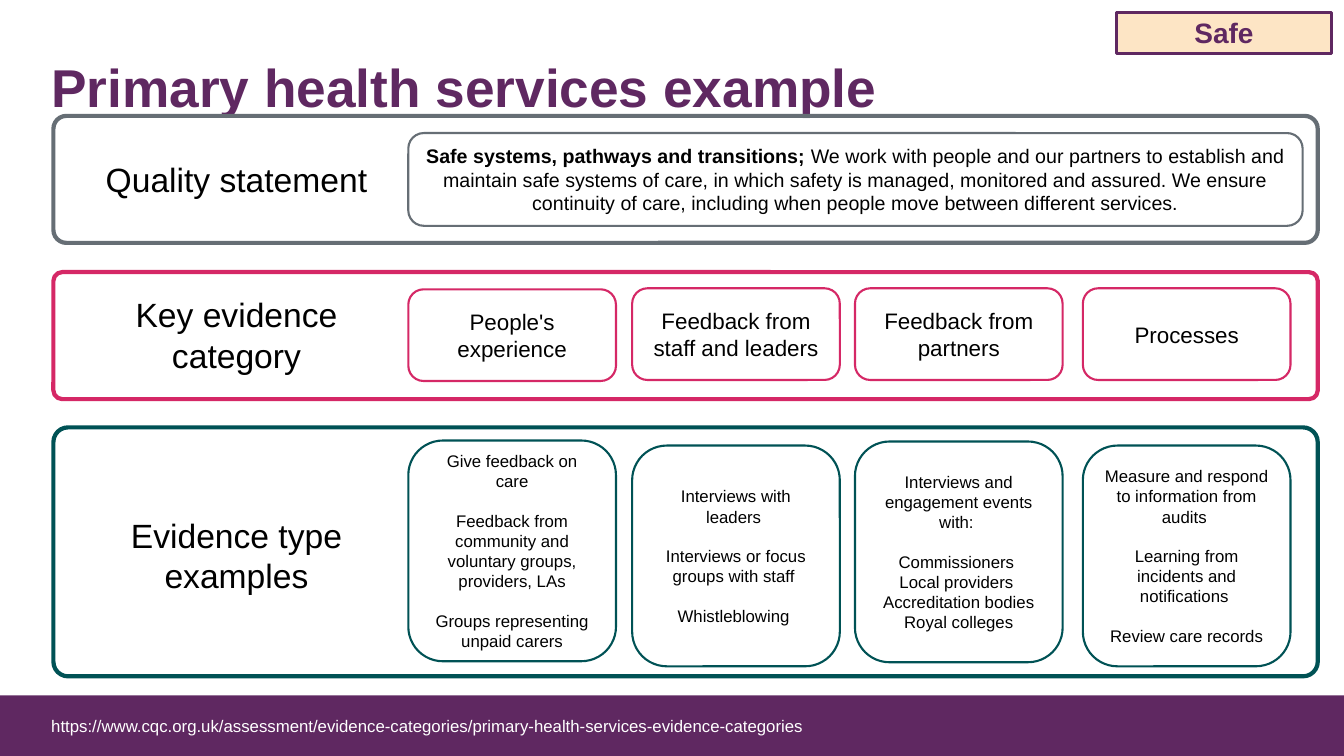
from pptx import Presentation
from pptx.dml.color import RGBColor
from pptx.enum.shapes import MSO_SHAPE as Shape
from pptx.enum.text import MSO_ANCHOR as Anchor, PP_ALIGN as Align
from pptx.util import Inches, Pt

# Content
TITLE = "Primary health services example"
TAG = "Safe"
LINK = "https://www.cqc.org.uk/assessment/evidence-categories/primary-health-services-evidence-categories"
STATEMENT = [
    ("Safe systems, pathways and transitions; ", True),
    ("We work with people and our partners to establish and maintain safe systems "
     "of care, in which safety is managed, monitored and assured. We ensure continuity "
     "of care, including when people move between different services.", False),
]
PURPLE, GREY, PINK, TEAL = "5F2861", "666E75", "D52866", "005255"
CREAM, BLACK, WHITE = "FDE5C5", "000000", "FFFFFF"

# Bands: label, colour, top, height, corner, label top, label height
BANDS = [
    ("Quality statement", GREY, 1.15, 1.26, 0.102, 1.53, 0.5),
    ("Key evidence category", PINK, 2.7, 1.26, 0.069, 2.87, 0.91),
    ("Evidence type examples", TEAL, 4.24, 2.47, 0.059, 5.06, 0.91),
]
# Columns: left, category top, category, examples top, groups of example lines
COLUMNS = [
    (4.05, 2.87, "People's experience", 4.37,
     [["Give feedback on care"],
      ["Feedback from community and voluntary groups, providers, LAs"],
      ["Groups representing unpaid carers"]]),
    (6.27, 2.86, "Feedback from staff and leaders", 4.42,
     [["Interviews with leaders "],
      ["Interviews or focus groups with staff "],
      ["Whistleblowing "]]),
    (8.48, 2.86, "Feedback from partners", 4.38,
     [["Interviews and engagement events with: "],
      ["Commissioners ", "Local providers ", "Accreditation bodies", "Royal colleges"]]),
    (10.74, 2.86, "Processes", 4.42,
     [["Measure and respond to information from audits "],
      ["Learning from incidents and notifications "],
      ["Review care records"]]),
]
COLUMN_WIDTH = 2.06
GROUP_GAP = 13.8  # one line of 12 pt text


def color(value):
    return RGBColor.from_string(value)


def write(shape, groups, size, ink=BLACK, bold=False, align=Align.CENTER, anchor=Anchor.MIDDLE):
    """Fill a shape with groups of lines, with a gap between groups."""
    frame = shape.text_frame
    frame.word_wrap = True
    frame.vertical_anchor = anchor
    paragraph = None
    for group in groups:
        for index, line in enumerate(group):
            if paragraph is None:
                paragraph = frame.paragraphs[0]
            else:
                paragraph = frame.add_paragraph()
                if index == 0:
                    paragraph.space_before = Pt(GROUP_GAP)
            paragraph.text = line
            paragraph.alignment = align
            font = paragraph.font
            font.name, font.size, font.bold = "Arial", Pt(size), bold
            font.color.rgb = color(ink)


def add_box(place, line=None, width=1.5, fill=None, kind=Shape.ROUNDED_RECTANGLE, corner=None):
    shape = slide.shapes.add_shape(kind, *map(Inches, place))
    shape.shadow.inherit = False
    if fill:
        shape.fill.solid()
        shape.fill.fore_color.rgb = color(fill)
    else:
        shape.fill.background()
    if line:
        shape.line.color.rgb = color(line)
        shape.line.width = Pt(width)
    else:
        shape.line.fill.background()
    if corner:
        shape.adjustments[0] = corner
    return shape


def add_text(place, text, size, **style):
    box = slide.shapes.add_textbox(*map(Inches, place))
    write(box, [[text]], size, **style)


presentation = Presentation()
presentation.slide_width, presentation.slide_height = Inches(13.33), Inches(7.5)
slide = presentation.slides.add_slide(presentation.slide_layouts[6])

# Footer bar and title
add_box((0, 6.9, 13.33, 0.6), fill=PURPLE, kind=Shape.RECTANGLE)
add_text((0.41, 0.45, 12.51, 0.77), TITLE, 38, ink=PURPLE, bold=True,
         align=Align.LEFT, anchor=Anchor.BOTTOM)

# Bands with their labels
for label, tint, top, height, corner, label_top, label_height in BANDS:
    add_box((0.53, top, 12.54, height), tint, 3, corner=corner)
    add_text((0.89, label_top, 2.91, label_height), label, 24, anchor=Anchor.TOP)

# Quality statement
statement = add_box((4.05, 1.32, 8.87, 0.92), GREY)
write(statement, [[""]], 14)
for text, bold in STATEMENT:
    run = statement.text_frame.paragraphs[0].add_run()
    run.text = text
    run.font.bold = bold

# Categories and their examples
for left, category_top, category, examples_top, examples in COLUMNS:
    write(add_box((left, category_top, COLUMN_WIDTH, 0.91), PINK), [[category]], 16)
    write(add_box((left, examples_top, COLUMN_WIDTH, 2.19), TEAL), examples, 12)

# Tag and footer link
tag = add_box((11.07, 0.12, 2.14, 0.41), PURPLE, 2, CREAM, Shape.RECTANGLE)
write(tag, [[TAG]], 20, ink=PURPLE, bold=True)
add_text((0.41, 7.05, 9.59, 0.3), LINK, 12, ink=WHITE, align=Align.LEFT, anchor=Anchor.TOP)

presentation.save("out.pptx")
